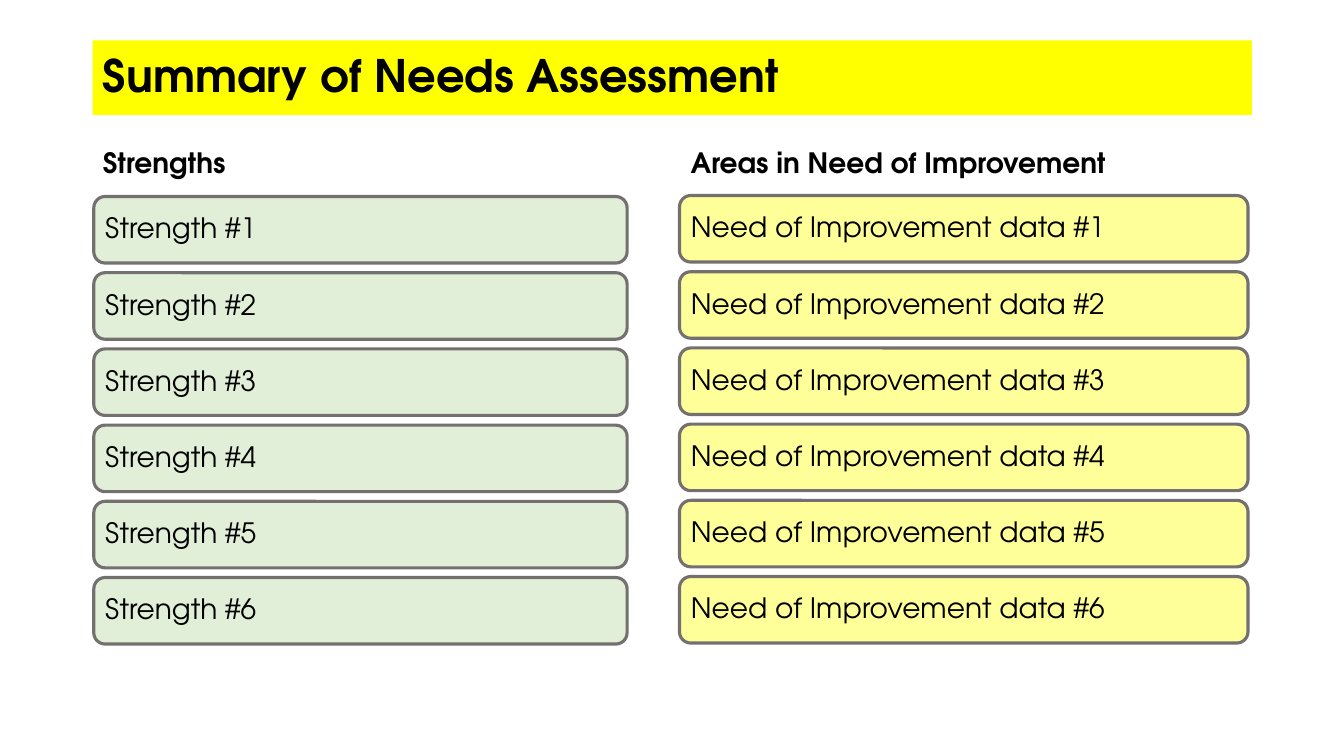
from dataclasses import dataclass

from pptx import Presentation
from pptx import util as u
from pptx.dml.color import RGBColor
from pptx.enum import shapes, text


@dataclass(frozen=True)
class Theme:
    """Hold the colours, type sizes and font of the slide."""
    font: str = "TeX Gyre Adventor"
    ink: str = "000000"
    band: str = "FFFF00"
    green: str = "E1EFD8"
    cream: str = "FFFF99"
    edge: str = "757070"
    title: int = 32
    body: int = 20
    line: float = 2.25


LOOK = Theme()
WIDE, HIGH = u.Inches(13.33), u.Inches(7.5)
COL, ROW = WIDE / 100, HIGH / 100
PITCH, TALL = 10.08, 8.8
COUNT = 6


def place(shape, box):
    """Set a shape on the grid of 100 columns by 100 rows."""
    x, y, w, h = box
    shape.left, shape.width = round(x * COL), round(w * COL)
    shape.top, shape.height = round(y * ROW), round(h * ROW)


def paint(shape, color):
    """Fill a shape with one colour."""
    shape.fill.solid()
    shape.fill.fore_color.rgb = RGBColor.from_string(color)


def write(shape, words, size, bold, pad):
    """Put one left-aligned line of text in a shape."""
    frame = shape.text_frame
    frame.text = words
    frame.word_wrap = True
    frame.auto_size = text.MSO_AUTO_SIZE.NONE
    frame.vertical_anchor = text.MSO_ANCHOR.MIDDLE
    frame.margin_left = frame.margin_right = u.Inches(pad[0])
    frame.margin_top = frame.margin_bottom = u.Inches(pad[1])
    line = frame.paragraphs[0]
    line.alignment = text.PP_ALIGN.LEFT
    line.line_spacing = 0.9
    line.space_before = u.Pt(0)
    font = line.runs[0].font
    font.name, font.size, font.bold = LOOK.font, u.Pt(size), bold
    font.color.rgb = RGBColor.from_string(LOOK.ink)


def head(holder, box, words, size):
    """Place a bold heading in a placeholder."""
    place(holder, box)
    write(holder, words, size, True, (0.1, 0.05))


def stack(slide, box, label, color):
    """Stack numbered cards down from the top of a box."""
    x, y, w, h = box
    for i in range(COUNT):
        card = slide.shapes.add_shape(
            shapes.MSO_SHAPE.ROUNDED_RECTANGLE, 0, 0, 0, 0)
        place(card, (x, y + i * PITCH, w, h))
        card.adjustments[0] = 0.17
        card.shadow.inherit = False
        paint(card, color)
        card.line.color.rgb = RGBColor.from_string(LOOK.edge)
        card.line.width = u.Pt(LOOK.line)
        write(card, f"{label} #{i + 1}", LOOK.body, False, (0.08, 0.08))


def compare(deck):
    """Build the slide that sets strengths beside needs."""
    slide = deck.slides.add_slide(deck.slide_layouts.get_by_name("Comparison"))
    title, left, spare, right, rest = slide.placeholders
    for empty in (spare, rest):
        empty.element.getparent().remove(empty.element)
    head(title, (6.9, 5.33, 86.25, 9.87),
         "Summary of Needs Assessment", LOOK.title)
    paint(title, LOOK.band)
    head(left, (6.9, 17.47, 42.3, 8.67), "Strengths", LOOK.body)
    stack(slide, (6.98, 26, 39.68, TALL), "Strength", LOOK.green)
    head(right, (50.63, 17.47, 42.5, 8.67),
         "Areas in Need of Improvement", LOOK.body)
    stack(slide, (50.56, 25.87, 42.3, TALL),
          "Need of Improvement data", LOOK.cream)


def main():
    """Make the deck and save it."""
    deck = Presentation()
    deck.slide_width, deck.slide_height = WIDE, HIGH
    compare(deck)
    deck.save("out.pptx")


if __name__ == "__main__":
    main()
